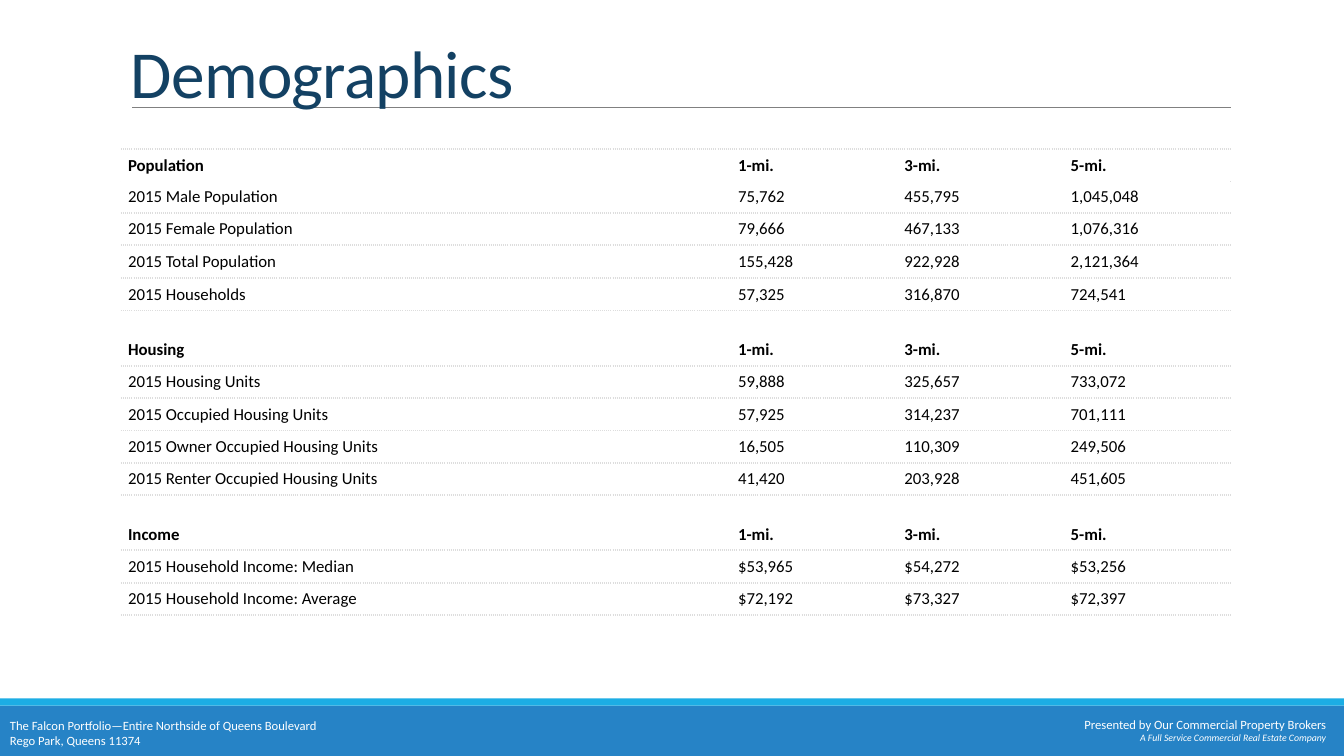
from lxml import etree
from pptx import Presentation
from pptx.dml.color import RGBColor
from pptx.enum.shapes import MSO_CONNECTOR, MSO_SHAPE
from pptx.enum.text import MSO_ANCHOR, PP_ALIGN
from pptx.oxml.ns import qn
from pptx.util import Inches, Pt

RECTANGLE, STRAIGHT = MSO_SHAPE.RECTANGLE, MSO_CONNECTOR.STRAIGHT
TOP, MIDDLE, BOTTOM = MSO_ANCHOR.TOP, MSO_ANCHOR.MIDDLE, MSO_ANCHOR.BOTTOM
LEFT, RIGHT = PP_ALIGN.LEFT, PP_ALIGN.RIGHT

FONT = "Calibri"
WHITE, BLACK, NAVY, GRAY = "FFFFFF", "000000", "134163", "808080"
FOOTER_BLUE, STRIPE_BLUE, RULE_GRAY = "2683C6", "1CADE4", "DDDDDD"
PLAIN_TABLE_STYLE = "{2D5ABB26-0587-4C30-8999-92F81FD0307C}"

DISTANCES = ("1-mi.", "3-mi.", "5-mi.")
TABLE_LEFT = 1.2
COLUMN_WIDTHS = (6.05, 1.65, 1.65, 1.65)

# (top, row height, rows)
TABLES = [
    (1.16, 0.32, [
        ("", "", "", ""),
        ("Population", *DISTANCES),
    ]),
    (1.79, 0.32, [
        ("2015 Male Population", "75,762", "455,795", "1,045,048"),
        ("2015 Female Population", "79,666", "467,133", "1,076,316"),
    ]),
    (2.44, 0.32, [
        ("2015 Total Population", "155,428", "922,928", "2,121,364"),
        ("2015 Households", "57,325", "316,870", "724,541"),
    ]),
    (3.31, 0.32, [
        ("Housing", *DISTANCES),
        ("2015 Housing Units", "59,888", "325,657", "733,072"),
        ("2015 Occupied Housing Units", "57,925", "314,237", "701,111"),
        ("2015 Owner Occupied Housing Units", "16,505", "110,309", "249,506"),
        ("2015 Renter Occupied Housing Units", "41,420", "203,928", "451,605"),
    ]),
    (5.14, 0.32, [
        ("Income", *DISTANCES),
        ("2015 Household Income: Median", "$53,965", "$54,272", "$53,256"),
        ("2015 Household Income: Average", "$72,192", "$73,327", "$72,397"),
    ]),
]

# (text, size, italic)
PROPERTY_LINES = [
    ("The Falcon Portfolio—Entire Northside of Queens Boulevard", 9, False),
    ("Rego Park, Queens 11374", 9, False),
]
PRESENTER_LINES = [
    ("Presented by Our Commercial Property Brokers", 9, False),
    ("A Full Service Commercial Real Estate Company", 7, True),
]


def color(value):
    return RGBColor.from_string(value)


def set_font(font, size, value, bold=False, italic=False):
    font.name, font.size = FONT, Pt(size)
    font.bold, font.italic = bold, italic
    font.color.rgb = color(value)


def add_band(page, top, height, fill):
    band = page.shapes.add_shape(RECTANGLE, 0, Inches(top), Inches(13.33), Inches(height))
    band.shadow.inherit = False
    band.fill.solid()
    band.fill.fore_color.rgb = color(fill)
    band.line.fill.background()


def add_text(page, place, lines, value, align=LEFT, anchor=TOP, wrap=True):
    box = page.shapes.add_textbox(*map(Inches, place))
    frame = box.text_frame
    frame.word_wrap, frame.vertical_anchor = wrap, anchor
    for index, (text, size, italic) in enumerate(lines):
        para = frame.add_paragraph() if index else frame.paragraphs[0]
        para.text, para.alignment = text, align
        set_font(para.font, size, value, italic=italic)
    return frame


def add_title_rule(page):
    rule = page.shapes.add_connector(
        STRAIGHT, Inches(1.31), Inches(1.07), Inches(12.21), Inches(1.07))
    rule.line.color.rgb = color(GRAY)
    rule.line.width = Pt(0.5)
    etree.SubElement(rule._element.spPr, qn("a:effectLst"))


def add_dotted_bottom(cell):
    """Put a dotted line under the cell; the schema wants it before the fill."""
    border = etree.Element(qn("a:lnB"), w=str(Pt(1.5)))
    fill = etree.SubElement(border, qn("a:solidFill"))
    etree.SubElement(fill, qn("a:srgbClr"), val=RULE_GRAY)
    etree.SubElement(border, qn("a:prstDash"), val="dot")
    cell._tc.get_or_add_tcPr().insert(0, border)


def fill_cell(cell, text, heading):
    cell.margin_left = cell.margin_right = Inches(0.07)
    cell.margin_top = cell.margin_bottom = Inches(0.06)
    cell.vertical_anchor = MIDDLE if heading else TOP
    cell.fill.solid()
    cell.fill.fore_color.rgb = color(WHITE)
    add_dotted_bottom(cell)
    cell.text = text
    set_font(cell.text_frame.paragraphs[0].font, 12, BLACK, bold=heading)


def add_data_table(page, top, row_height, rows):
    table = page.shapes.add_table(
        len(rows), len(COLUMN_WIDTHS), Inches(TABLE_LEFT), Inches(top),
        Inches(sum(COLUMN_WIDTHS)), Inches(row_height * len(rows))).table
    table.first_row = table.horz_banding = False
    table._tbl.tblPr.find(qn("a:tableStyleId")).text = PLAIN_TABLE_STYLE
    for column, width in zip(table.columns, COLUMN_WIDTHS):
        column.width = Inches(width)
    for row, values in zip(table.rows, rows):
        row.height = Inches(row_height)
        for cell, text in zip(row.cells, values):
            fill_cell(cell, text, heading=values[1:] == DISTANCES)


def main():
    deck = Presentation()
    deck.slide_width, deck.slide_height = Inches(13.33), Inches(7.5)
    page = deck.slides.add_slide(deck.slide_layouts[6])

    add_band(page, 7, 0.5, FOOTER_BLUE)
    add_band(page, 6.93, 0.07, STRIPE_BLUE)
    add_title_rule(page)
    add_text(page, (0, 7.07, 3.29, 0.56), PROPERTY_LINES, WHITE, wrap=False)
    add_text(page, (10.44, 7.06, 2.81, 0.37), PRESENTER_LINES, WHITE, align=RIGHT)

    title = add_text(page, (1.2, 0.31, 11, 0.85), [("Demographics", 48, False)],
                     NAVY, anchor=BOTTOM).paragraphs[0]
    title.line_spacing = 0.85
    title.runs[0].font._element.set("spc", "-50")

    for top, row_height, rows in TABLES:
        add_data_table(page, top, row_height, rows)
    deck.save("out.pptx")


if __name__ == "__main__":
    main()
